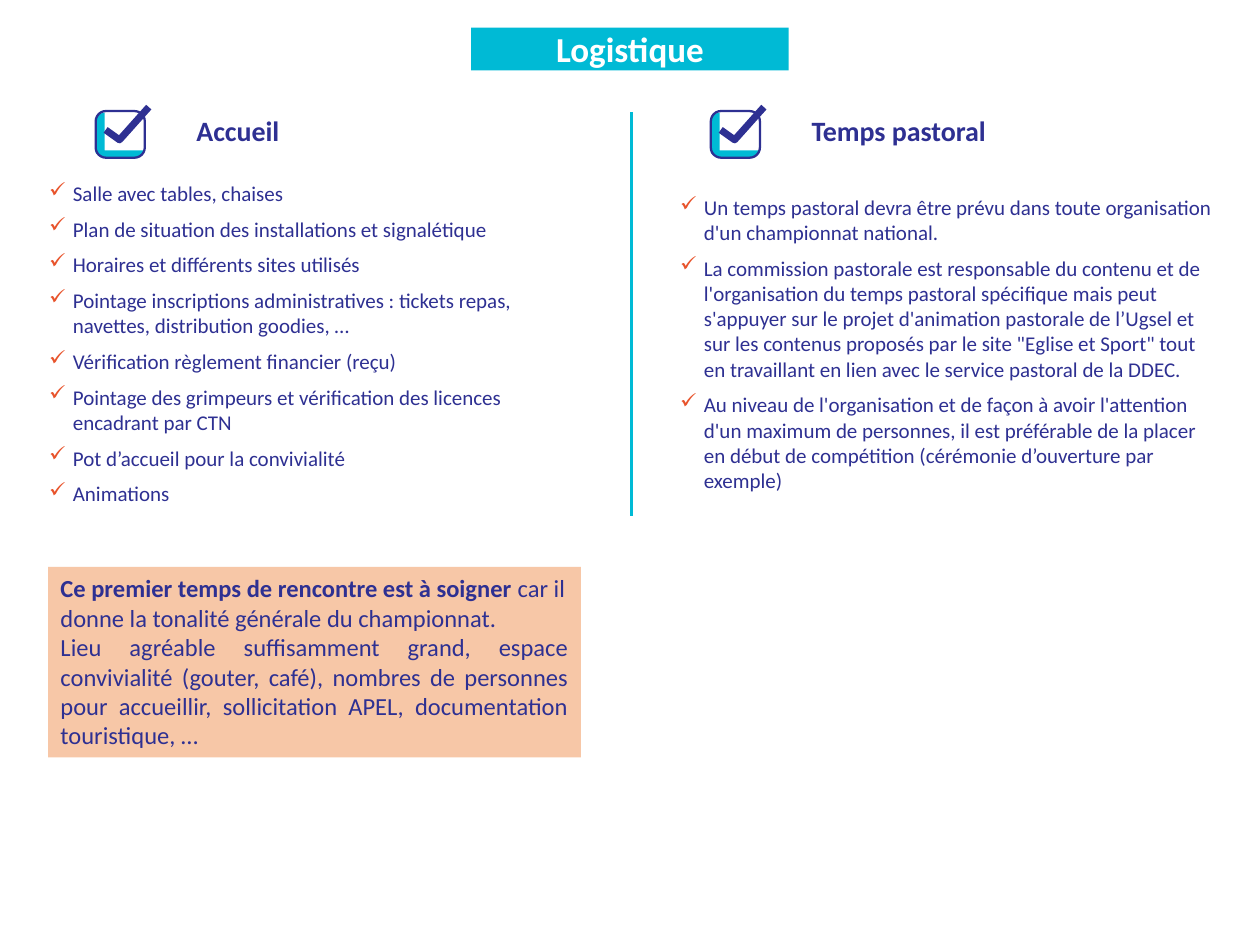
from dataclasses import dataclass

from lxml import etree
from pptx import Presentation
from pptx.dml.color import RGBColor
from pptx.enum.shapes import MSO_CONNECTOR, MSO_SHAPE
from pptx.enum.text import MSO_ANCHOR, MSO_AUTO_SIZE, PP_ALIGN
from pptx.oxml.ns import qn
from pptx.util import Cm, Pt

RECTANGLE = MSO_SHAPE.RECTANGLE
ROUNDED = MSO_SHAPE.ROUNDED_RECTANGLE
STRAIGHT = MSO_CONNECTOR.STRAIGHT
TOP = MSO_ANCHOR.TOP
GROW = MSO_AUTO_SIZE.SHAPE_TO_FIT_TEXT
LEFT, CENTER, JUSTIFY = PP_ALIGN.LEFT, PP_ALIGN.CENTER, PP_ALIGN.JUSTIFY


@dataclass(frozen=True)
class Theme:
    font: str = "Calibri"
    navy: str = "2E3092"
    cyan: str = "00BAD5"
    orange: str = "E8532B"
    peach: str = "F7C7A7"
    white: str = "FFFFFF"
    title_size: int = 20
    heading_size: int = 16
    callout_size: int = 14
    body_size: int = 12


COLUMN_WIDTH = 10.74
LEFT_COLUMN, RIGHT_COLUMN = 0.97, 13.69

# Checkbox outlines in cm, measured from the top left of the box
BOX_SIZE = (0.99, 0.94)
BOX_SHADE = [(0.18, 0.03), (0.1, 0.05), (0.05, 0.1), (0, 0.18), (0, 0.84), (0.05, 0.89),
             (0.15, 0.94), (0.86, 0.94), (0.97, 0.86), (0.99, 0.79), (0.18, 0.79)]
TICK = [(0.2, 0.38), (0.48, 0.58), (1.07, -0.08)]

WELCOME = [
    "Salle avec tables, chaises",
    "Plan de situation des installations et signalétique",
    "Horaires et différents sites utilisés",
    "Pointage inscriptions administratives : tickets repas, navettes, distribution goodies, …",
    "Vérification règlement financier (reçu)",
    "Pointage des grimpeurs et vérification des licences encadrant par CTN",
    "Pot d’accueil pour la convivialité",
    "Animations",
]
PASTORAL = [
    "Un temps pastoral devra être prévu dans toute organisation d'un championnat national.",
    "La commission pastorale est responsable du contenu et de l'organisation du temps pastoral "
    "spécifique mais peut s'appuyer sur le projet d'animation pastorale de l’Ugsel et sur les "
    "contenus proposés par le site \"Eglise et Sport\" tout en travaillant en lien avec le "
    "service pastoral de la DDEC.",
    "Au niveau de l'organisation et de façon à avoir l'attention d'un maximum de personnes, il "
    "est préférable de la placer en début de compétition (cérémonie d’ouverture par exemple)",
]
CALLOUT = [
    (LEFT, [("Ce premier temps de rencontre est à soigner ", True),
            ("car il donne la tonalité générale du championnat.", False)]),
    (JUSTIFY, [("Lieu agréable suffisamment grand, espace convivialité (gouter, café), nombres de "
                "personnes pour accueillir, sollicitation APEL, documentation touristique, …",
                False)]),
]


class SlideBuilder:
    def __init__(self, slide, theme):
        self.slide = slide
        self.theme = theme

    def prepare_frame(self, shape, margins=(0, 0, 0, 0)):
        frame = shape.text_frame
        frame.word_wrap = True
        frame.auto_size = GROW
        frame.vertical_anchor = TOP
        frame.margin_left, frame.margin_top, frame.margin_right, frame.margin_bottom = (
            Cm(margin) for margin in margins)
        return frame

    def add_run(self, paragraph, text, size, color, bold=False):
        run = paragraph.add_run()
        run.text = text
        run.font.name = self.theme.font
        run.font.size = Pt(size)
        run.font.bold = bold
        run.font.color.rgb = RGBColor.from_string(color)

    def paint(self, shape, fill=None, line=None, width=0):
        shape.shadow.inherit = False
        if fill:
            shape.fill.solid()
            shape.fill.fore_color.rgb = RGBColor.from_string(fill)
        else:
            shape.fill.background()
        if line:
            shape.line.color.rgb = RGBColor.from_string(line)
            shape.line.width = Pt(width)
        else:
            shape.line.fill.background()

    def panel(self, left, top, width, height, fill):
        shape = self.slide.shapes.add_shape(RECTANGLE, Cm(left), Cm(top), Cm(width), Cm(height))
        self.paint(shape, fill)
        return shape

    def title(self, text):
        shape = self.panel(9.5, 0.56, 6.4, 0.86, self.theme.cyan)
        paragraph = self.prepare_frame(shape).paragraphs[0]
        paragraph.alignment = CENTER
        self.add_run(paragraph, text, self.theme.title_size, self.theme.white, True)

    def heading(self, text, left, top, width):
        box = self.slide.shapes.add_textbox(Cm(left), Cm(top), Cm(width), Cm(0.69))
        paragraph = self.prepare_frame(box, (0.28, 0, 0, 0)).paragraphs[0]
        self.add_run(paragraph, text, self.theme.heading_size, self.theme.navy, True)

    def checkbox(self, left, top):
        shapes = self.slide.shapes.add_group_shape().shapes

        def outline(points, close):
            corners = [(Cm(left + x), Cm(top + y)) for x, y in points]
            builder = shapes.build_freeform(*corners[0])
            builder.add_line_segments(corners[1:], close=close)
            return builder.convert_to_shape()

        self.paint(outline(BOX_SHADE, True), fill=self.theme.cyan)
        width, height = BOX_SIZE
        box = shapes.add_shape(ROUNDED, Cm(left), Cm(top), Cm(width), Cm(height))
        box.adjustments[0] = 0.22
        self.paint(box, line=self.theme.navy, width=1.3)
        self.paint(outline(TICK, False), line=self.theme.navy, width=4)

    def section(self, text, left, width):
        """Draw a checkbox with its heading."""
        self.heading(text, left + 1.75, 2.29, width)
        self.checkbox(left, 2.24)

    def add_check_bullet(self, paragraph):
        properties = paragraph._p.get_or_add_pPr()
        properties.set("marL", str(Cm(0.5)))
        properties.set("indent", str(Cm(-0.48)))
        color = etree.SubElement(properties, qn("a:buClr"))
        etree.SubElement(color, qn("a:srgbClr"), val=self.theme.orange)
        etree.SubElement(properties, qn("a:buChar"), char="✓")

    def checklist(self, items, left, top, height):
        box = self.slide.shapes.add_textbox(Cm(left), Cm(top), Cm(COLUMN_WIDTH), Cm(height))
        frame = self.prepare_frame(box, (0, 0.03, 0, 0))
        for index, item in enumerate(items):
            paragraph = frame.add_paragraph() if index else frame.paragraphs[0]
            self.add_check_bullet(paragraph)
            if index:
                paragraph.space_before = Pt(6)
            self.add_run(paragraph, item, self.theme.body_size, self.theme.navy)

    def callout(self, paragraphs, left, top, height):
        shape = self.panel(left, top, COLUMN_WIDTH, height, self.theme.peach)
        frame = self.prepare_frame(shape, (0.25, 0.13, 0.25, 0.13))
        for index, (alignment, runs) in enumerate(paragraphs):
            paragraph = frame.add_paragraph() if index else frame.paragraphs[0]
            paragraph.alignment = alignment
            for text, bold in runs:
                self.add_run(paragraph, text, self.theme.callout_size, self.theme.navy, bold)

    def divider(self, x, top, bottom):
        line = self.slide.shapes.add_connector(STRAIGHT, Cm(x), Cm(top), Cm(x), Cm(bottom))
        line.line.color.rgb = RGBColor.from_string(self.theme.cyan)
        line.line.width = Pt(1.25)
        etree.SubElement(line._element.spPr, qn("a:effectLst"))


def main():
    presentation = Presentation()
    presentation.slide_width, presentation.slide_height = Cm(25.4), Cm(19.05)
    slide = presentation.slides.add_slide(presentation.slide_layouts[6])
    builder = SlideBuilder(slide, Theme())
    builder.title("Logistique")
    builder.section("Accueil", 1.93, 3.71)
    builder.checklist(WELCOME, LEFT_COLUMN, 3.61, 7.39)
    builder.callout(CALLOUT, LEFT_COLUMN, 11.43, 3.84)
    builder.section("Temps pastoral", 14.33, 4.9)
    builder.divider(12.73, 2.26, 10.41)
    builder.checklist(PASTORAL, RIGHT_COLUMN, 3.89, 6.83)
    presentation.save("out.pptx")


if __name__ == "__main__":
    main()
